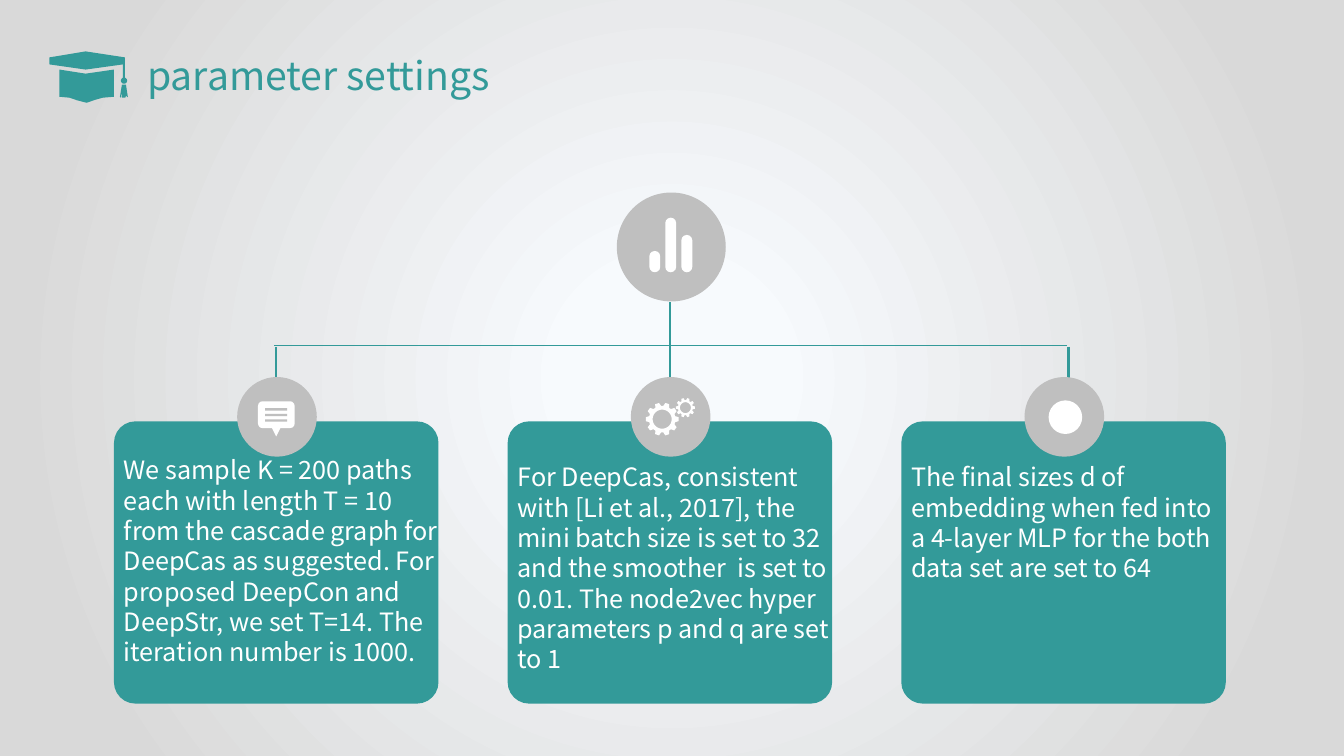
from math import cos, pi, sin

from lxml import etree
from pptx import Presentation
from pptx.dml.color import RGBColor
from pptx.enum import shapes, text
from pptx.oxml import ns
from pptx.util import Pt

TEAL = RGBColor(0x33, 0x9A, 0x99)
GREY = RGBColor(0xBF, 0xBF, 0xBF)
WHITE = RGBColor(0xFF, 0xFF, 0xFF)
GLOW = RGBColor(0xF7, 0xFA, 0xFD)
EDGE = RGBColor(0xD9, 0xD9, 0xD9)
FONT = "Noto Sans CJK SC"

OVAL = shapes.MSO_SHAPE.OVAL
RECTANGLE = shapes.MSO_SHAPE.RECTANGLE
ROUNDED = shapes.MSO_SHAPE.ROUNDED_RECTANGLE

CARD_LEFT, CARD_TOP, CARD_PITCH = 81.4, 301, 281.2
CARD_WIDTH, CARD_HEIGHT = 231.8, 201.6
BADGE_OFFSET, BADGE_TOP, BADGE_SIZE = 88, 269.3, 56.9

# Each card: text top and wording
CARDS = [
    (321.1, "We sample K = 200 paths each with length T = 10 from the cascade graph "
     "for DeepCas as suggested. For proposed DeepCon and DeepStr, we set T=14. "
     "The iteration number is 1000."),
    (326.2, "For DeepCas, consistent with [Li et al., 2017], the mini batch size is "
     "set to 32 and the smoother  is set to 0.01. The node2vec hyper parameters "
     "p and q are set to 1"),
    (326.2, "The final sizes d of embedding when fed into a 4-layer MLP for the both "
     "data set are set to 64"),
]

# Graduation cap outlines
CAP_BOARD = [(35.3, 41), (61.2, 36.7), (89.3, 41), (89.3, 55.4),
             (87.8, 55.4), (87.8, 46), (61.2, 49.7), (35.3, 46)]
CAP_TASSEL = [(87.1, 60.5), (90, 60.5), (91.4, 69.5), (90, 68.4), (89.5, 69.8),
              (87.1, 69.8), (86.9, 65.5), (86.4, 69.8), (85.7, 69.1)]
CAP_BODY = [(81.4, 69.1), (81.4, 49.7), (61.2, 52.6), (42.5, 49.7), (42.5, 69.1),
            (49.7, 69.8), (55, 71.6), (61.9, 73.4), (68, 71.3), (73.4, 69.8)]


def paint(shape, color):
    shape.shadow.inherit = False
    shape.fill.solid()
    shape.fill.fore_color.rgb = color
    shape.line.fill.background()


def add_preset(slide, kind, left, top, width, height, color, corner=None):
    shape = slide.shapes.add_shape(kind, Pt(left), Pt(top), Pt(width), Pt(height))
    paint(shape, color)
    if corner is not None:
        shape.adjustments[0] = corner
    return shape


def add_outline(slide, contours, color):
    builder = None
    for contour in contours:
        start, *others = [(Pt(x), Pt(y)) for x, y in contour]
        if builder is None:
            builder = slide.shapes.build_freeform(*start)
        else:
            builder.move_to(*start)
        builder.add_line_segments(others, close=True)
    paint(builder.convert_to_shape(), color)


def add_line(slide, x1, y1, x2, y2, width):
    line = slide.shapes.add_connector(
        shapes.MSO_CONNECTOR.STRAIGHT, Pt(x1), Pt(y1), Pt(x2), Pt(y2))
    line.line.color.rgb = TEAL
    line.line.width = Pt(width)
    etree.SubElement(line.element.spPr, ns.qn("a:effectLst"))


def set_text(text_frame, words, size, spacing, color):
    text_frame.text = words
    text_frame.word_wrap = True
    paragraph = text_frame.paragraphs[0]
    paragraph.line_spacing = Pt(spacing)
    font = paragraph.runs[0].font
    font.name, font.size, font.color.rgb = FONT, Pt(size), color
    properties = paragraph.runs[0].font._element
    latin = properties.find(ns.qn("a:latin"))
    east_asian = etree.Element(ns.qn("a:ea"), typeface=FONT)
    latin.addnext(east_asian)


def polar(x, y, radius, angle):
    return x + radius * cos(angle), y + radius * sin(angle)


def ring(x, y, radius, count=40):
    return [polar(x, y, radius, 2 * pi * i / count) for i in range(count)]


def add_gear(slide, x, y, outer, root, hole, teeth=10):
    rim = []
    for tooth in range(teeth):
        angle = 2 * pi * tooth / teeth
        for radius, turn in ((root, -0.23), (outer, -0.12), (outer, 0.12), (root, 0.23)):
            rim.append(polar(x, y, radius, angle + turn))
    add_outline(slide, [rim, ring(x, y, hole)], WHITE)


def set_background(slide):
    fill = slide.background.fill
    fill.gradient()
    for stop, position, color in zip(fill.gradient_stops, (0.13, 0.86), (GLOW, EDGE)):
        stop.position = position
        stop.color.rgb = color
    gradient = slide.element.find(".//" + ns.qn("a:gradFill"))
    gradient.remove(gradient.find(ns.qn("a:lin")))
    radial = etree.SubElement(gradient, ns.qn("a:path"), path="circle")
    etree.SubElement(radial, ns.qn("a:fillToRect"),
                     l="50000", t="50000", r="50000", b="50000")


def add_title(slide):
    title = slide.shapes.title
    title.left, title.top, title.width, title.height = Pt(100), Pt(36.7), Pt(255), Pt(33.8)
    frame = title.text_frame
    frame.margin_left = frame.margin_right = frame.margin_top = frame.margin_bottom = 0
    frame.vertical_anchor = text.MSO_ANCHOR.MIDDLE
    set_text(frame, "parameter settings", 28, 33.7, TEAL)
    frame.paragraphs[0].alignment = text.PP_ALIGN.CENTER
    add_outline(slide, [CAP_BOARD, ring(88.6, 57.6, 2.2), CAP_TASSEL, CAP_BODY], TEAL)


def add_tree(slide):
    # Root badge with its bar icon
    add_preset(slide, OVAL, 440.6, 137.5, 77.8, 77.8, GREY)
    for left, height in ((463.8, 15.2), (475.2, 39), (486.7, 26.7)):
        add_preset(slide, ROUNDED, left, 194.5 - height, 7.8, height, WHITE, 0.5)
    # Branches
    add_line(slide, 195.8, 247, 762.5, 247, 1)
    for x, top, bottom in ((478.8, 216, 278.6), (197.3, 247.7, 309.6), (763.2, 247.7, 309.6)):
        add_line(slide, x, top, x, bottom, 1.5)


def add_card(slide, index, text_top, words):
    left = CARD_LEFT + index * CARD_PITCH
    add_preset(slide, ROUNDED, left, CARD_TOP, CARD_WIDTH, CARD_HEIGHT, TEAL, 0.076)
    add_preset(slide, OVAL, left + BADGE_OFFSET, BADGE_TOP, BADGE_SIZE, BADGE_SIZE, GREY)
    box = slide.shapes.add_textbox(
        Pt(left), Pt(text_top), Pt(239.8), Pt(CARD_TOP + CARD_HEIGHT - text_top))
    set_text(box.text_frame, words, 18, 21.65, WHITE)


def add_badge_icons(slide):
    # Speech bubble
    add_preset(slide, ROUNDED, 184.3, 286.6, 26.2, 19.2, WHITE, 0.17)
    add_outline(slide, [[(193.7, 304.6), (200.9, 304.6), (197.3, 311.8)]], WHITE)
    for row in range(3):
        add_preset(slide, RECTANGLE, 189.4, 291.6 + 4 * row, 15.8, 1.7, GREY)
    # Gears
    add_gear(slide, 473, 299.4, 11.8, 9.5, 6.8)
    add_gear(slide, 489.6, 291.2, 6.9, 5.3, 3.9)
    # Plain mark
    add_preset(slide, OVAL, 749, 286, 24, 24, WHITE)


def main():
    presentation = Presentation()
    presentation.slide_width, presentation.slide_height = Pt(960), Pt(540)
    slide = presentation.slides.add_slide(presentation.slide_layouts[5])
    set_background(slide)
    add_title(slide)
    add_tree(slide)
    for index, (text_top, words) in enumerate(CARDS):
        add_card(slide, index, text_top, words)
    add_badge_icons(slide)
    presentation.save("out.pptx")


if __name__ == "__main__":
    main()
